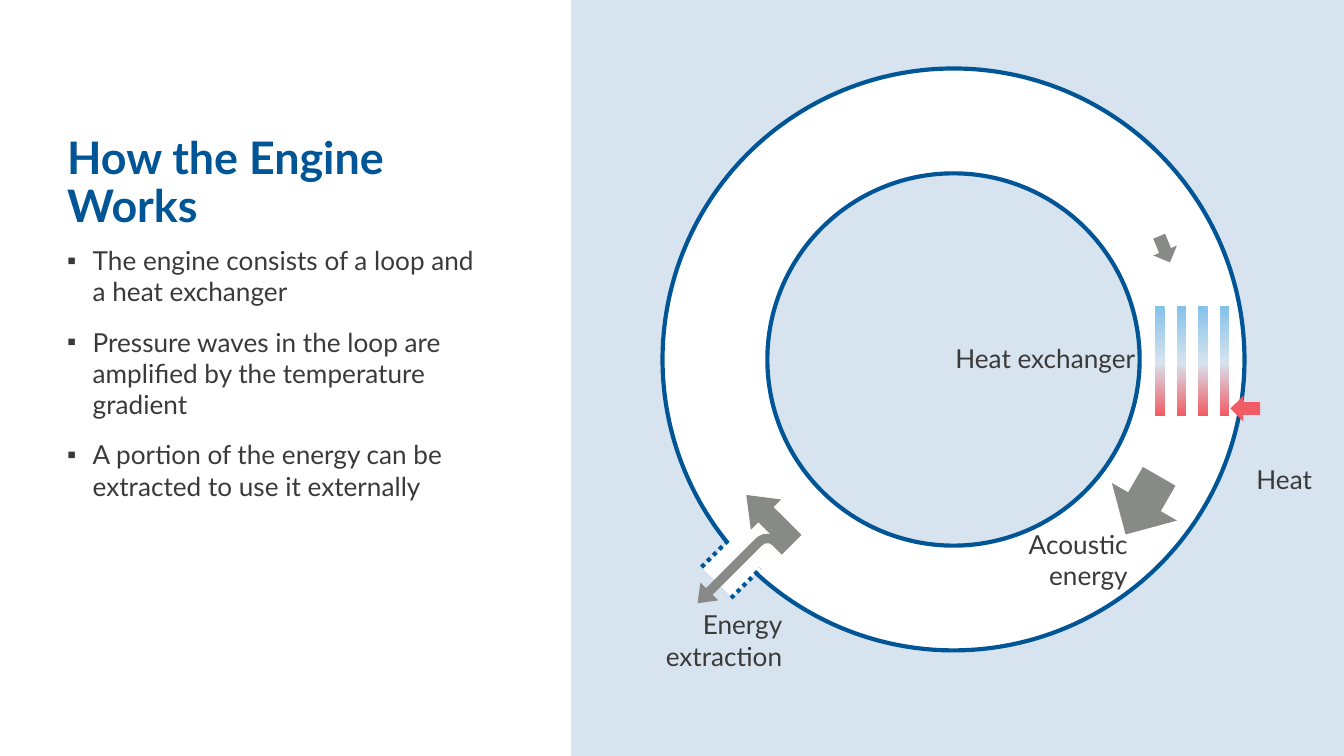
from copy import deepcopy
from dataclasses import dataclass

from lxml.etree import SubElement
from pptx import Presentation
from pptx.dml.color import RGBColor
from pptx.enum.dml import MSO_LINE
from pptx.enum.shapes import MSO_CONNECTOR, MSO_SHAPE
from pptx.enum.text import MSO_ANCHOR, MSO_AUTO_SIZE, PP_ALIGN
from pptx.oxml.ns import qn
from pptx.util import Inches, Pt


@dataclass(frozen=True)
class Theme:
    font: str = "Lato"
    title_size: float = 24
    body_size: float = 14
    line_width: float = 2.25
    white: str = "FFFFFF"
    panel: str = "D7E3EE"
    blue: str = "005596"
    text: str = "393A39"
    gray: str = "878A87"
    cold: str = "84C2EA"
    hot: str = "F15B63"


THEME = Theme()
COLUMNS, ROWS = 100, 56.25  # square grid cells of a tenth of an inch
CELL = Inches(0.1)
LOOP_CENTER = (70.95, 26.75)
BULLETS = [
    "The engine consists of a loop and a heat exchanger",
    "Pressure waves in the loop are amplified by the temperature gradient",
    "A portion of the energy can be extracted to use it externally",
]


def cells(*counts):
    return [round(count * CELL) for count in counts]


def color(value):
    return RGBColor.from_string(value)


def apply_format(target, values):
    for name, value in values.items():
        setattr(target, name, value)


def add_shape(shapes, kind, box, fill=None, line=None, rotation=0, adjustments=()):
    shape = shapes.add_shape(kind, *cells(*box))
    shape.shadow.inherit = False
    shape.rotation = rotation
    for index, value in enumerate(adjustments):
        shape.adjustments[index] = value
    if fill:
        shape.fill.solid()
        shape.fill.fore_color.rgb = color(fill)
    if line:
        shape.line.color.rgb = color(line)
        shape.line.width = Pt(THEME.line_width)
    else:
        shape.line.fill.background()
    return shape


def add_ring_edge(shapes, diameter, fill):
    left, top = (center - diameter / 2 for center in LOOP_CENTER)
    add_shape(shapes, MSO_SHAPE.OVAL, (left, top, diameter, diameter), fill, THEME.blue)


def add_plate(shapes, left):
    """Add one exchanger plate, cold at its top and hot at its bottom."""
    plate = add_shape(shapes, MSO_SHAPE.RECTANGLE, (left, 26.5, 8.2, 0.7), rotation=90)
    plate.fill.gradient()
    plate.fill.gradient_angle = 0
    stop_list = plate.fill._fill._gradFill.find(qn("a:gsLst"))
    stop_list.append(deepcopy(stop_list[-1]))
    stops = [(0, THEME.cold), (0.52, THEME.panel), (1, THEME.hot)]
    for stop, (position, value) in zip(plate.fill.gradient_stops, stops):
        stop.position = position
        stop.color.rgb = color(value)


def add_dotted_line(shapes, start, end):
    connector = shapes.add_connector(MSO_CONNECTOR.STRAIGHT, *cells(*start, *end))
    SubElement(connector._element.spPr, qn("a:effectLst"))
    connector.line.color.rgb = color(THEME.blue)
    apply_format(connector.line, {"width": Pt(THEME.line_width),
                                  "dash_style": MSO_LINE.ROUND_DOT})
    # The preset dash of small dots is named sysDot in the file format.
    connector.line._ln.find(qn("a:prstDash")).set("val", "sysDot")


def add_bullet(paragraph):
    properties = paragraph._p.get_or_add_pPr()
    indent = str(Inches(0.19))
    properties.set("marL", indent)
    properties.set("indent", "-" + indent)
    SubElement(properties, qn("a:buFont"), typeface="Arial")
    SubElement(properties, qn("a:buChar"), char="▪")


def add_text(shapes, box, lines, frame_format, paragraph_format=None,
             size=THEME.body_size, value=THEME.text, bold=False, bullets=False):
    frame = shapes.add_textbox(*cells(*box)).text_frame
    apply_format(frame, frame_format)
    for index, line in enumerate(lines):
        paragraph = frame.add_paragraph() if index else frame.paragraphs[0]
        paragraph.text = line
        if bullets:
            add_bullet(paragraph)
        if index and bullets:
            paragraph.space_before = Pt(10)
        apply_format(paragraph, paragraph_format or {})
        for run in paragraph.runs:
            apply_format(run.font, {"name": THEME.font, "size": Pt(size), "bold": bold})
            run.font.color.rgb = color(value)
        for line_break in paragraph._p.findall(qn("a:br")):
            line_break.append(deepcopy(paragraph.runs[0]._r.rPr))


def add_label(shapes, box, text, alignment=PP_ALIGN.LEFT):
    frame_format = {"word_wrap": False, "auto_size": MSO_AUTO_SIZE.SHAPE_TO_FIT_TEXT}
    add_text(shapes, box, [text], frame_format, {"alignment": alignment})


def add_explanation(shapes):
    frame_format = {"word_wrap": True, "margin_left": 0}
    add_text(shapes, (5, 9, 32.3, 8.8), ["How the Engine Works"],
             {**frame_format, "vertical_anchor": MSO_ANCHOR.BOTTOM},
             {"line_spacing": 0.9}, THEME.title_size, THEME.blue, bold=True)
    add_text(shapes, (5, 17.7, 32.3, 34.6), BULLETS, frame_format, bullets=True)


def add_loop(shapes):
    loop = shapes.add_group_shape().shapes
    add_ring_edge(loop, 43.3, THEME.white)
    add_ring_edge(loop, 27.7, THEME.panel)


def add_heat_exchanger(shapes):
    for index in range(4):
        add_plate(shapes, 82.2 + 1.6 * index)
    add_shape(shapes, MSO_SHAPE.UP_ARROW, (85.7, 17.5, 1.9, 2.1), THEME.gray, rotation=157.5)
    add_label(shapes, (70.1, 25, 15.6, 3.4), "Heat exchanger")
    add_label(shapes, (75.4, 38.8, 9.5, 5.7), "Acoustic\venergy", PP_ALIGN.RIGHT)
    add_shape(shapes, MSO_SHAPE.DOWN_ARROW, (91.7, 29.3, 1.9, 2.2), THEME.hot, rotation=90)
    add_label(shapes, (92.5, 34, 6.3, 3.4), "Heat")
    add_shape(shapes, MSO_SHAPE.UP_ARROW, (82.2, 35.1, 5.6, 5), THEME.gray,
              rotation=210, adjustments=(0.5, 0.563))


def add_extraction(shapes):
    outlet = shapes.add_group_shape().shapes
    add_shape(outlet, MSO_SHAPE.RECTANGLE, (52.9, 40.7, 3.1, 3.1), THEME.white, rotation=315)
    for left, bottom in [(52.2, 42.2), (54.4, 44.5)]:
        add_dotted_line(outlet, (left, bottom), (left + 2.2, bottom - 2.2))
    add_shape(shapes, MSO_SHAPE.UP_ARROW, (55.7, 36.1, 3.2, 5), THEME.gray,
              rotation=315, adjustments=(0.5, 0.649))
    branch = add_shape(shapes, MSO_SHAPE.BENT_ARROW, (51.1, 41.1, 7.7, 2.8), THEME.gray,
                       rotation=315, adjustments=(0.25, 0.334, 0.442, 0.438))
    branch._element.spPr.find(qn("a:xfrm")).set("flipH", "1")
    add_label(shapes, (48.2, 44.8, 11, 5.7), "Energy\vextraction", PP_ALIGN.RIGHT)


def main():
    presentation = Presentation()
    presentation.slide_width, presentation.slide_height = cells(COLUMNS, ROWS)
    slide = presentation.slides.add_slide(presentation.slide_layouts[6])
    shapes = slide.shapes
    panel_left = 42.5
    add_shape(shapes, MSO_SHAPE.RECTANGLE, (panel_left, 0, COLUMNS - panel_left, ROWS),
              THEME.panel)
    add_loop(shapes)
    add_explanation(shapes)
    add_heat_exchanger(shapes)
    add_extraction(shapes)
    presentation.save("out.pptx")


if __name__ == "__main__":
    main()
